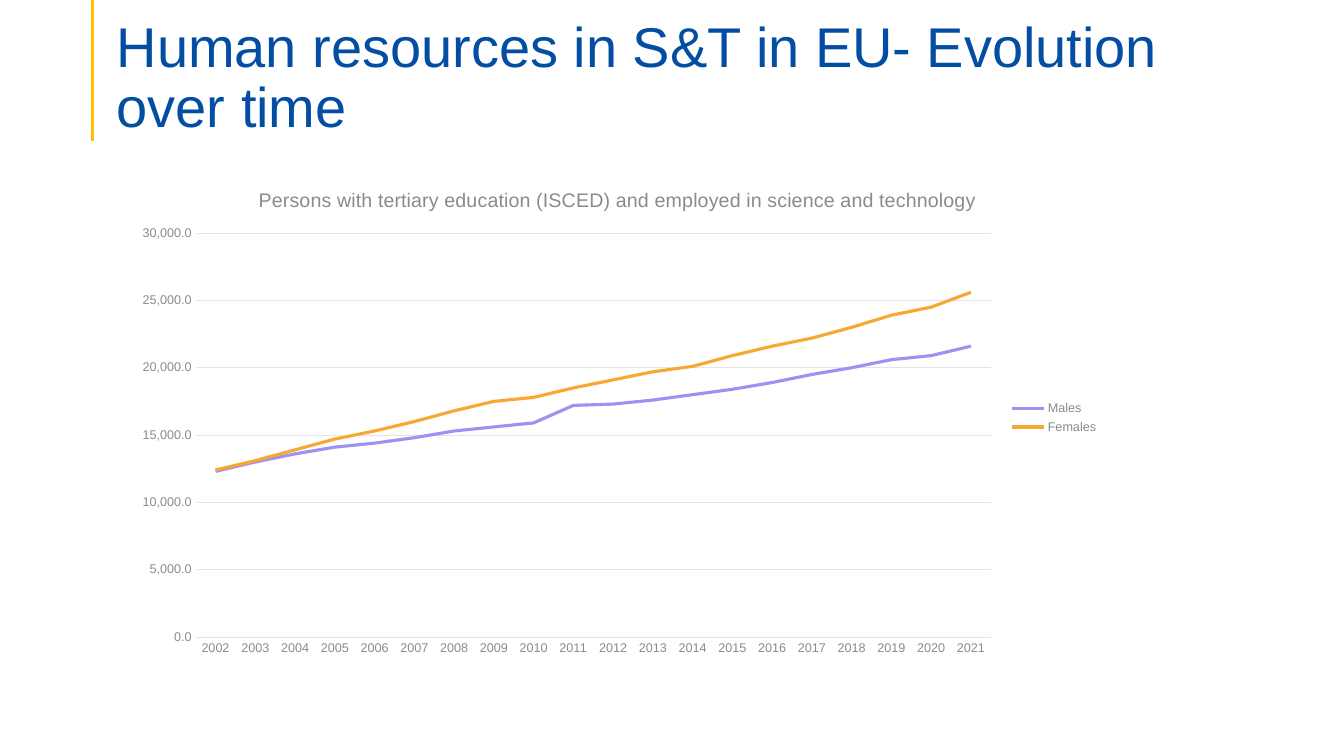
from dataclasses import dataclass

from lxml.etree import SubElement
from pptx import Presentation
from pptx.chart.chart import Chart
from pptx.chart.data import CategoryChartData
from pptx.dml.color import RGBColor
from pptx.dml.line import LineFormat
from pptx.enum.chart import XL_CHART_TYPE, XL_LEGEND_POSITION, XL_TICK_MARK
from pptx.enum.shapes import MSO_CONNECTOR
from pptx.enum.text import MSO_ANCHOR, MSO_AUTO_SIZE, PP_ALIGN
from pptx.oxml.ns import qn
from pptx.slide import Slide
from pptx.text.text import Font
from pptx.util import Cm, Pt

GREY_TEXT = "8B8B8B"
GRID_GREY = "E4E4E4"
YEARS = range(2002, 2022)


@dataclass
class WorkforceSeries:
    name: str
    color: str
    thousands: list[int]


WORKFORCE = [
    WorkforceSeries("Males", "9F91F2", [
        12300, 13000, 13600, 14100, 14400, 14800, 15300, 15600, 15900, 17200,
        17300, 17600, 18000, 18400, 18900, 19500, 20000, 20600, 20900, 21600]),
    WorkforceSeries("Females", "F7A833", [
        12400, 13100, 13900, 14700, 15300, 16000, 16800, 17500, 17800, 18500,
        19100, 19700, 20100, 20900, 21600, 22200, 23000, 23900, 24500, 25600]),
]


def rgb(color: str) -> RGBColor:
    return RGBColor.from_string(color)


def format_font(font: Font, size: float, color: str) -> None:
    font.name = "Arial"
    font.size = Pt(size)
    font.bold = False
    font.color.rgb = rgb(color)


def format_line(line: LineFormat, color: str, width: float) -> None:
    line.color.rgb = rgb(color)
    line.width = Pt(width)


def add_accent_line(slide: Slide) -> None:
    line = slide.shapes.add_connector(
        MSO_CONNECTOR.STRAIGHT, Cm(2.34), Cm(0), Cm(2.34), Cm(3.56))
    format_line(line.line, "FFC000", 2.25)
    SubElement(line._element.spPr, qn("a:effectLst"))


def add_title(slide: Slide, text: str) -> None:
    title = slide.shapes.title
    title.left, title.top, title.width, title.height = Cm(2.69), Cm(1.35), Cm(29.21), Cm(2.18)
    frame = title.text_frame
    frame.text = text
    frame.word_wrap = True
    frame.auto_size = MSO_AUTO_SIZE.NONE
    frame.vertical_anchor = MSO_ANCHOR.BOTTOM
    frame.margin_left = frame.margin_right = Cm(0.25)
    frame.margin_top, frame.margin_bottom = Cm(0.13), Cm(0)
    paragraph = frame.paragraphs[0]
    paragraph.alignment = PP_ALIGN.LEFT
    paragraph.line_spacing = 0.9
    format_font(paragraph.runs[0].font, 40, "034EA2")


def place_plot(chart: Chart, **fractions: float) -> None:
    """Fix the inner plot area as fractions of the chart frame."""
    plot_area = chart._chartSpace.chart.plotArea
    for layout in plot_area.findall(qn("c:layout")):
        plot_area.remove(layout)
    layout = SubElement(plot_area, qn("c:layout"))
    plot_area.insert(0, layout)
    manual = SubElement(layout, qn("c:manualLayout"))
    settings = {"layoutTarget": "inner", "xMode": "edge", "yMode": "edge", **fractions}
    for tag, value in settings.items():
        SubElement(manual, qn(f"c:{tag}")).set("val", str(value))


def format_axes(chart: Chart) -> None:
    for axis in (chart.category_axis, chart.value_axis):
        axis.major_tick_mark = axis.minor_tick_mark = XL_TICK_MARK.NONE
        format_font(axis.tick_labels.font, 9, GREY_TEXT)
    format_line(chart.category_axis.format.line, GRID_GREY, 0.75)
    values = chart.value_axis
    values.minimum_scale, values.maximum_scale, values.major_unit = 0, 30000, 5000
    values.tick_labels.number_format = "#,##0.0"
    values.tick_labels.number_format_is_linked = False
    values.format.line.fill.background()
    format_line(values.major_gridlines.format.line, GRID_GREY, 0.75)


def add_workforce_chart(slide: Slide, title: str) -> None:
    data = CategoryChartData(number_format="#,##0.0")
    data.categories = [str(year) for year in YEARS]
    for group in WORKFORCE:
        data.add_series(group.name, group.thousands)
    chart = slide.shapes.add_chart(
        XL_CHART_TYPE.LINE, Cm(3.2), Cm(4.24), Cm(24.74), Cm(12.57), data).chart
    format_font(chart.font, 10, "4D4D4D")

    chart.has_title = True
    chart.chart_title.include_in_layout = False
    chart.chart_title.text_frame.text = title
    format_font(chart.chart_title.text_frame.paragraphs[0].runs[0].font, 14, GREY_TEXT)

    chart.has_legend = True
    chart.legend.position = XL_LEGEND_POSITION.RIGHT
    chart.legend.include_in_layout = False
    format_font(chart.legend.font, 9, GREY_TEXT)

    format_axes(chart)
    place_plot(chart, x=0.07, y=0.13, w=0.81, h=0.81)
    chart.plots[0].vary_by_categories = False
    for series, group in zip(chart.plots[0].series, WORKFORCE):
        series.smooth = False
        format_line(series.format.line, group.color, 2.25)


def main() -> None:
    presentation = Presentation()
    presentation.slide_width, presentation.slide_height = Cm(33.87), Cm(19.05)
    slide = presentation.slides.add_slide(presentation.slide_layouts[5])
    add_accent_line(slide)
    add_title(slide, "Human resources in S&T in EU- Evolution over time")
    add_workforce_chart(
        slide, "Persons with tertiary education (ISCED) and employed in science and technology")
    presentation.save("out.pptx")


if __name__ == "__main__":
    main()
